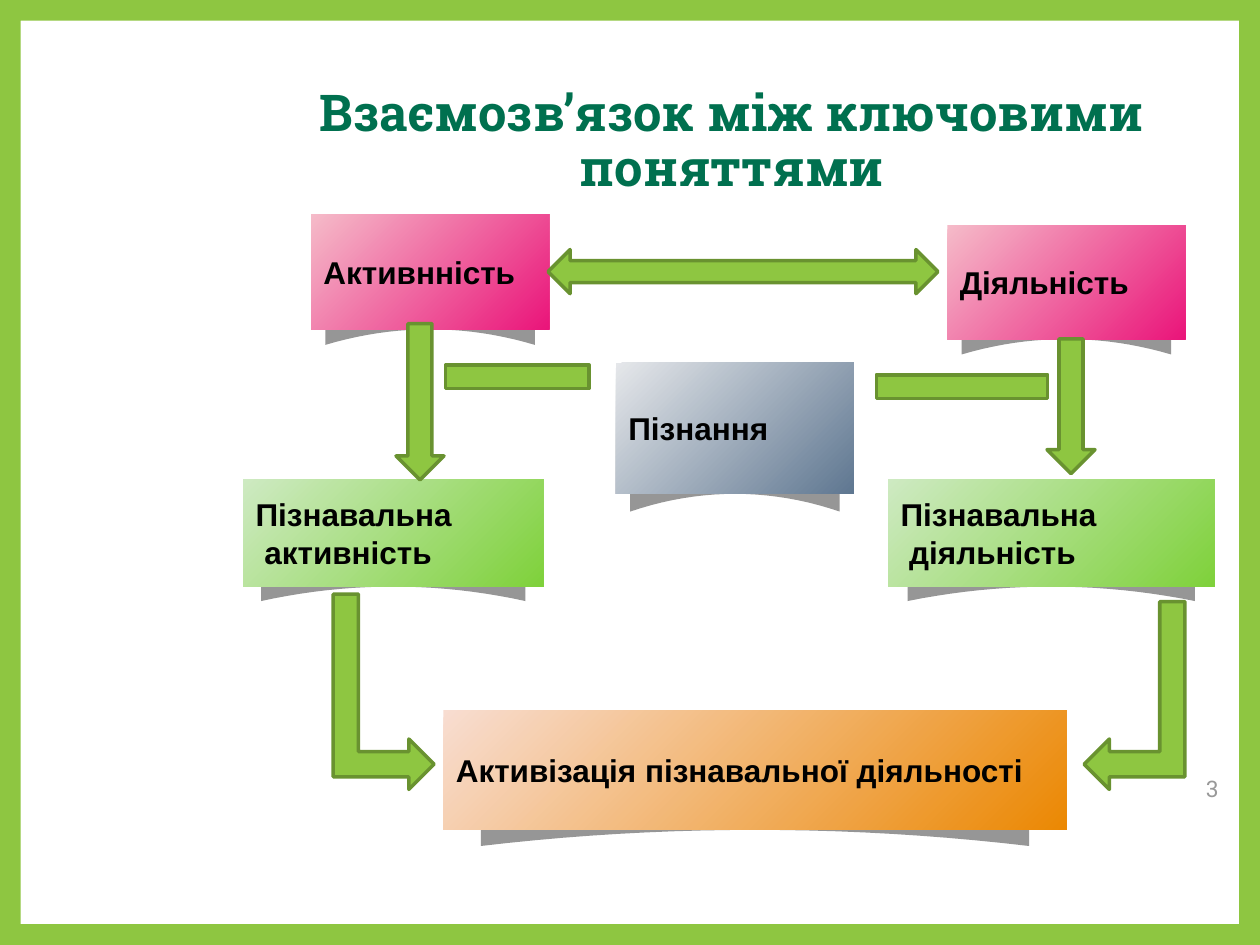
from dataclasses import dataclass

from pptx import Presentation
from pptx.dml.color import RGBColor
from pptx.enum.shapes import MSO_SHAPE
from pptx.enum.text import MSO_ANCHOR, PP_ALIGN
from pptx.util import Pt


@dataclass(frozen=True)
class Theme:
    accent: str = "8EC641"
    accent_edge: str = "699230"
    title: str = "00704F"
    number: str = "999999"
    text: str = "000000"
    shadow: str = "969696"
    pink: tuple = ("F5BBC9", "EA157A")
    green: tuple = ("CEEAC2", "7FD13B")
    slate: tuple = ("E5E7EA", "5F7791")
    orange: tuple = ("F8DDD1", "EB8803")
    title_size: int = 29
    concept_size: int = 18
    number_size: int = 13
    edge_width: int = 2


THEME = Theme()
CURL_STEPS = 10


def paint(shape, color):
    shape.shadow.inherit = False
    shape.fill.solid()
    shape.fill.fore_color.rgb = RGBColor.from_string(color)
    shape.line.fill.background()


def style(paragraph, font_name, size, color, bold=False):
    font = paragraph.font
    font.name, font.size, font.bold = font_name, Pt(size), bold
    font.color.rgb = RGBColor.from_string(color)


def add_border(slide, width, height):
    border = slide.shapes.add_shape(MSO_SHAPE.FRAME, 0, 0, width, height)
    border.adjustments[0] = 0.022
    paint(border, THEME.accent)


def add_label(slide, box, text, align, anchor, *font, spacing=None):
    frame = slide.shapes.add_textbox(*map(Pt, box)).text_frame
    frame.word_wrap = True
    frame.vertical_anchor = anchor
    frame.margin_left = frame.margin_right = Pt(7.2)
    frame.margin_top = frame.margin_bottom = Pt(7.2)
    paragraph = frame.paragraphs[0]
    paragraph.text = text
    paragraph.alignment = align
    paragraph.line_spacing = spacing
    style(paragraph, *font)


def add_curled_shadow(group, left, top, width, height):
    center, bottom = left + width / 2, top + height
    reach, drop = 0.44 * width, 0.135 * height
    curl = []
    for step in range(CURL_STEPS, -CURL_STEPS - 1, -1):
        t = step / CURL_STEPS
        curl.append((center + reach * t, bottom + drop * t * t))
    shoulder = bottom - 0.235 * height
    roof = [
        (center - reach, shoulder),
        (center, bottom - 0.35 * height),
        (center + reach, shoulder),
    ]
    outline = [(Pt(x), Pt(y)) for x, y in curl + roof]
    builder = group.shapes.build_freeform(*outline[0], scale=1.0)
    builder.add_line_segments(outline[1:], close=True)
    paint(builder.convert_to_shape(), THEME.shadow)


def add_concept(slide, box, gradient, lines):
    group = slide.shapes.add_group_shape()
    add_curled_shadow(group, *box)
    card = group.shapes.add_shape(MSO_SHAPE.RECTANGLE, *map(Pt, box))
    card.shadow.inherit = False
    card.line.fill.background()
    card.fill.gradient()
    card.fill.gradient_angle = 315
    for stop, color in zip(card.fill.gradient_stops, gradient):
        stop.color.rgb = RGBColor.from_string(color)
    frame = card.text_frame
    frame.word_wrap = False
    frame.vertical_anchor = MSO_ANCHOR.MIDDLE
    frame.text = "\n".join(lines)
    for paragraph in frame.paragraphs:
        paragraph.alignment = PP_ALIGN.LEFT
        style(paragraph, "Arial", THEME.concept_size, THEME.text, True)


def add_link(slide, preset, box, rotation=0, mirrored=False):
    link = slide.shapes.add_shape(preset, *map(Pt, box))
    paint(link, THEME.accent)
    link.line.color.rgb = RGBColor.from_string(THEME.accent_edge)
    link.line.width = Pt(THEME.edge_width)
    link.rotation = rotation
    if mirrored:
        link._element.spPr.xfrm.set("flipV", "1")


def main():
    deck = Presentation()
    deck.slide_width, deck.slide_height = Pt(720), Pt(540)
    slide = deck.slides.add_slide(deck.slide_layouts[6])

    add_border(slide, deck.slide_width, deck.slide_height)
    add_label(slide, (667.4, 435.6, 36, 31), "3", PP_ALIGN.RIGHT, MSO_ANCHOR.TOP,
              "Roboto", THEME.number_size, THEME.number)
    add_label(slide, (168.5, 16.5, 499.7, 103.7),
              "Взаємозв’язок між ключовими поняттями",
              PP_ALIGN.CENTER, MSO_ANCHOR.BOTTOM,
              "Roboto Slab", THEME.title_size, THEME.title, True, spacing=0.9)

    concepts = [
        ((139, 274, 171.5, 61.2), THEME.green, ["Пізнавальна", " активність"]),
        ((507.5, 274, 186.5, 61.2), THEME.green, ["Пізнавальна", " діяльність"]),
        ((177.8, 122.4, 136, 65.8), THEME.pink, ["Активнність"]),
        ((541.4, 128.8, 136, 65), THEME.pink, ["Діяльність"]),
        ((352, 207.2, 136, 75), THEME.slate, ["Пізнання"]),
        ((253.4, 406, 356, 68.2), THEME.orange,
         ["Активізація пізнавальної діяльності"]),
    ]
    for box, gradient, lines in concepts:
        add_concept(slide, box, gradient, lines)

    add_link(slide, MSO_SHAPE.LEFT_RIGHT_ARROW, (313.2, 142.6, 222.8, 25.2))
    add_link(slide, MSO_SHAPE.DOWN_ARROW, (226.3, 185, 27.4, 89.3))
    add_link(slide, MSO_SHAPE.DOWN_ARROW, (598.3, 193.7, 27.4, 77))
    add_link(slide, MSO_SHAPE.BENT_UP_ARROW, (163.4, 366.5, 111.6, 57.6), 90)
    add_link(slide, MSO_SHAPE.BENT_UP_ARROW, (594.7, 368.6, 107.3, 57.6), 90, True)
    add_link(slide, MSO_SHAPE.MATH_MINUS, (239.8, 186.5, 111.6, 57.6))
    add_link(slide, MSO_SHAPE.MATH_MINUS, (483.1, 192.2, 133.2, 57.6))

    deck.save("out.pptx")


if __name__ == "__main__":
    main()
